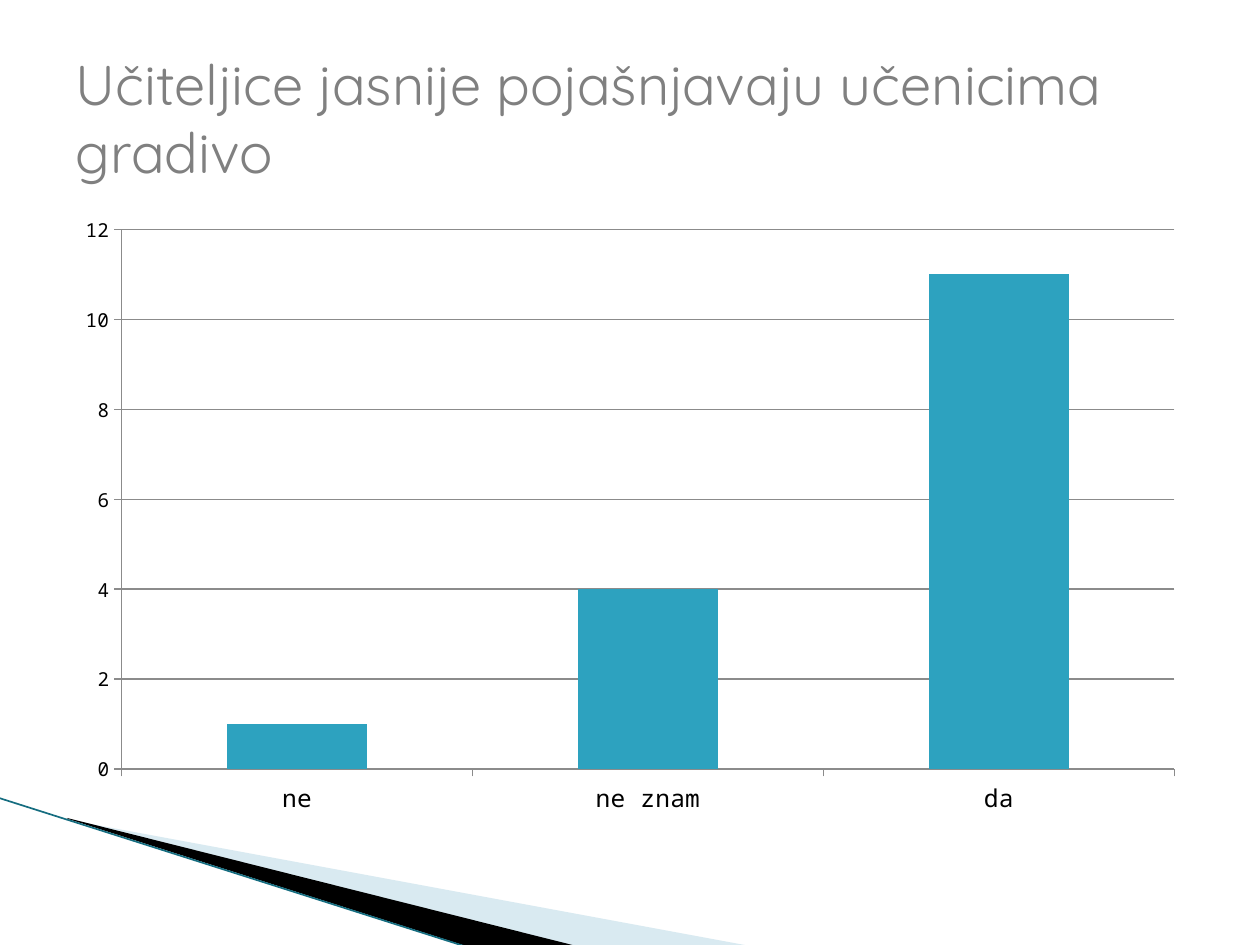
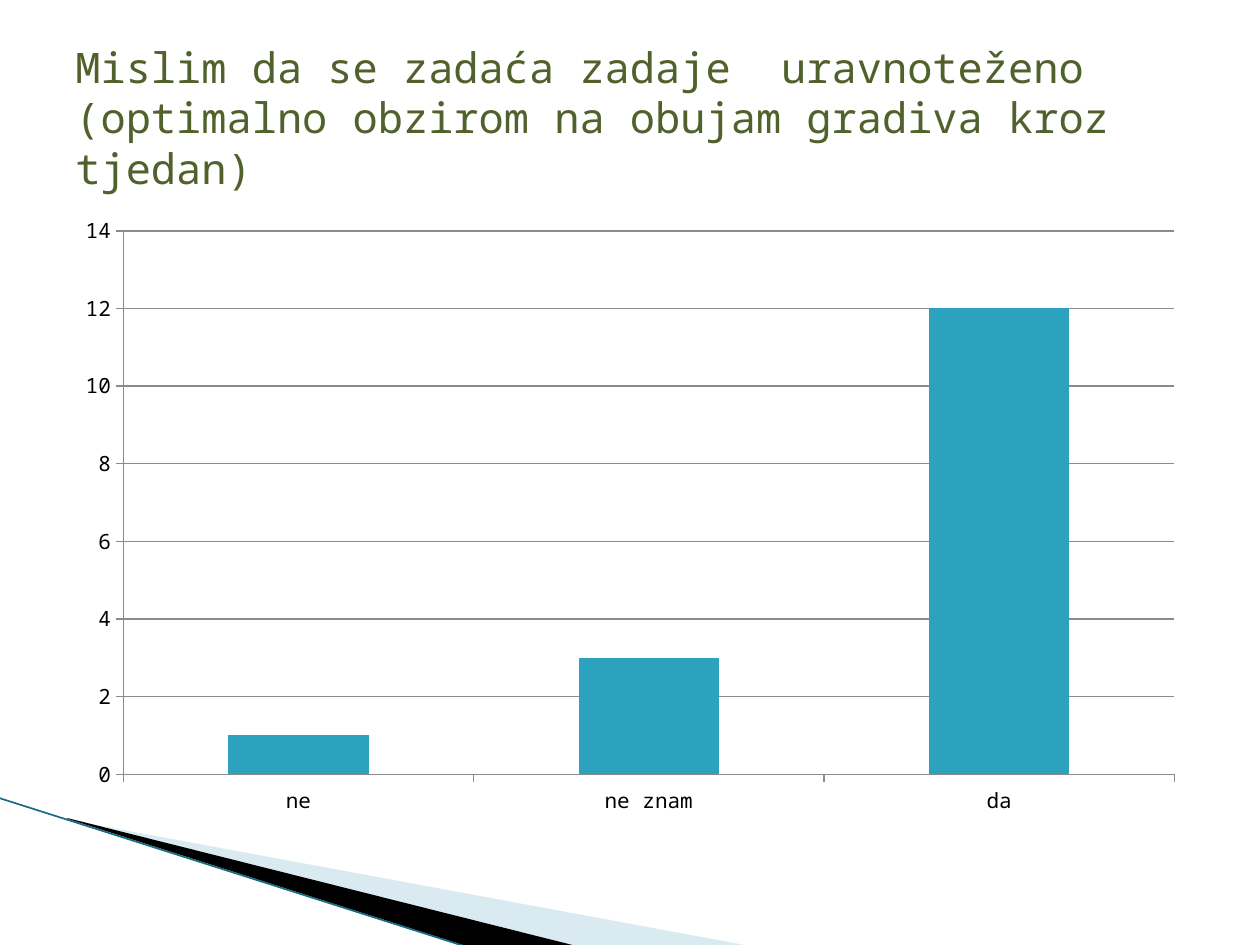
from lxml.etree import SubElement
from pptx import Presentation
from pptx.chart.data import CategoryChartData
from pptx.dml.color import RGBColor
from pptx.enum.chart import XL_CHART_TYPE as ChartType, XL_TICK_MARK as TickMark
from pptx.enum.shapes import MSO_CONNECTOR as Connector
from pptx.enum.text import MSO_ANCHOR as Anchor
from pptx.oxml.ns import qn
from pptx.util import Emu, Pt

EMU_PER_PX = 914400 / 126
COLORS = {
    "bar": "2DA2BF",
    "axis": "8B8B8B",
    "text": "000000",
    "gray_title": "808080",
    "green_title": "50612B",
    "pale_wedge": "A0CBDC",
    "black_wedge": "000000",
    "edge": "156D80",
}
CHART_FONT = "Noto Sans Mono"
ANSWERS = ["ne", "ne znam", "da"]

# Wedges in the bottom left corner: colour, opacity in percent, corners
WEDGES = [
    ("pale_wedge", 40, [(69, 820), (750, 946), (575, 946), (69, 819)]),
    ("black_wedge", 100, [(67, 818), (576, 946), (469, 947), (68, 819)]),
]
EDGE = (-1, 798, 467, 947)

SLIDES = [
    {
        "title": "Učiteljice jasnije pojašnjavaju učenicima gradivo",
        "font": "Quicksand", "size": 32, "color": "gray_title",
        "votes": [1, 4, 11], "category_size": 14, "value_size": 11,
    },
    {
        "title": "Mislim da se zadaća zadaje  uravnoteženo "
                 "(optimalno obzirom na obujam gradiva kroz tjedan)",
        "font": CHART_FONT, "size": 24, "color": "green_title",
        "votes": [1, 3, 12], "category_size": 12, "value_size": 12,
    },
]


def px(*lengths):
    """Turn pixel lengths into EMU."""
    return [Emu(round(length * EMU_PER_PX)) for length in lengths]


def rgb(name):
    return RGBColor.from_string(COLORS[name])


presentation = Presentation()
presentation.slide_width, presentation.slide_height = px(1260, 945)
blank_layout = presentation.slide_layouts[6]

for content in SLIDES:
    slide = presentation.slides.add_slide(blank_layout)

    # Corner decoration
    for color, opacity, corners in WEDGES:
        builder = slide.shapes.build_freeform(*corners[0], scale=EMU_PER_PX)
        builder.add_line_segments(corners[1:], close=True)
        wedge = builder.convert_to_shape()
        wedge.shadow.inherit = False
        wedge.line.fill.background()
        wedge.fill.solid()
        wedge.fill.fore_color.rgb = rgb(color)
        if opacity < 100:
            fill_color = wedge.fill._xPr.find(f".//{qn('a:srgbClr')}")
            SubElement(fill_color, qn("a:alpha"), val=str(opacity * 1000))

    edge = slide.shapes.add_connector(Connector.STRAIGHT, *px(*EDGE))
    edge.line.color.rgb = rgb("edge")
    edge.line.width = Pt(0.95)
    SubElement(edge._element.spPr, qn("a:effectLst"))

    # Chart of answers
    data = CategoryChartData()
    data.categories = ANSWERS
    data.add_series("Series 1", content["votes"])
    chart = slide.shapes.add_chart(
        ChartType.COLUMN_CLUSTERED, *px(63, 204, 1134, 624), data).chart
    chart.has_legend = False
    chart.has_title = False
    chart.font.name = CHART_FONT
    chart.font.size = Pt(10)
    chart.font.color.rgb = rgb("text")

    plot = chart.plots[0]
    plot.gap_width = 150
    plot.vary_by_categories = False
    bars = plot.series[0].format.fill
    bars.solid()
    bars.fore_color.rgb = rgb("bar")

    chart.value_axis.has_major_gridlines = True
    gridlines = chart.value_axis.major_gridlines
    gridlines.format.line.color.rgb = rgb("axis")
    gridlines.format.line.width = Pt(0.75)
    for axis, size in ((chart.category_axis, content["category_size"]),
                       (chart.value_axis, content["value_size"])):
        axis.major_tick_mark = TickMark.OUTSIDE
        axis.minor_tick_mark = TickMark.NONE
        axis.format.line.color.rgb = rgb("axis")
        axis.format.line.width = Pt(0.75)
        axis.tick_labels.font.size = Pt(size)
        axis.tick_labels.font.name = CHART_FONT
        axis.tick_labels.font.color.rgb = rgb("text")

    # Title
    title_frame = slide.shapes.add_textbox(*px(63, 38, 1134, 158)).text_frame
    title_frame.word_wrap = True
    title_frame.vertical_anchor = Anchor.MIDDLE
    run = title_frame.paragraphs[0].add_run()
    run.text = content["title"]
    run.font.name = content["font"]
    run.font.size = Pt(content["size"])
    run.font.color.rgb = rgb(content["color"])

presentation.save("out.pptx")
